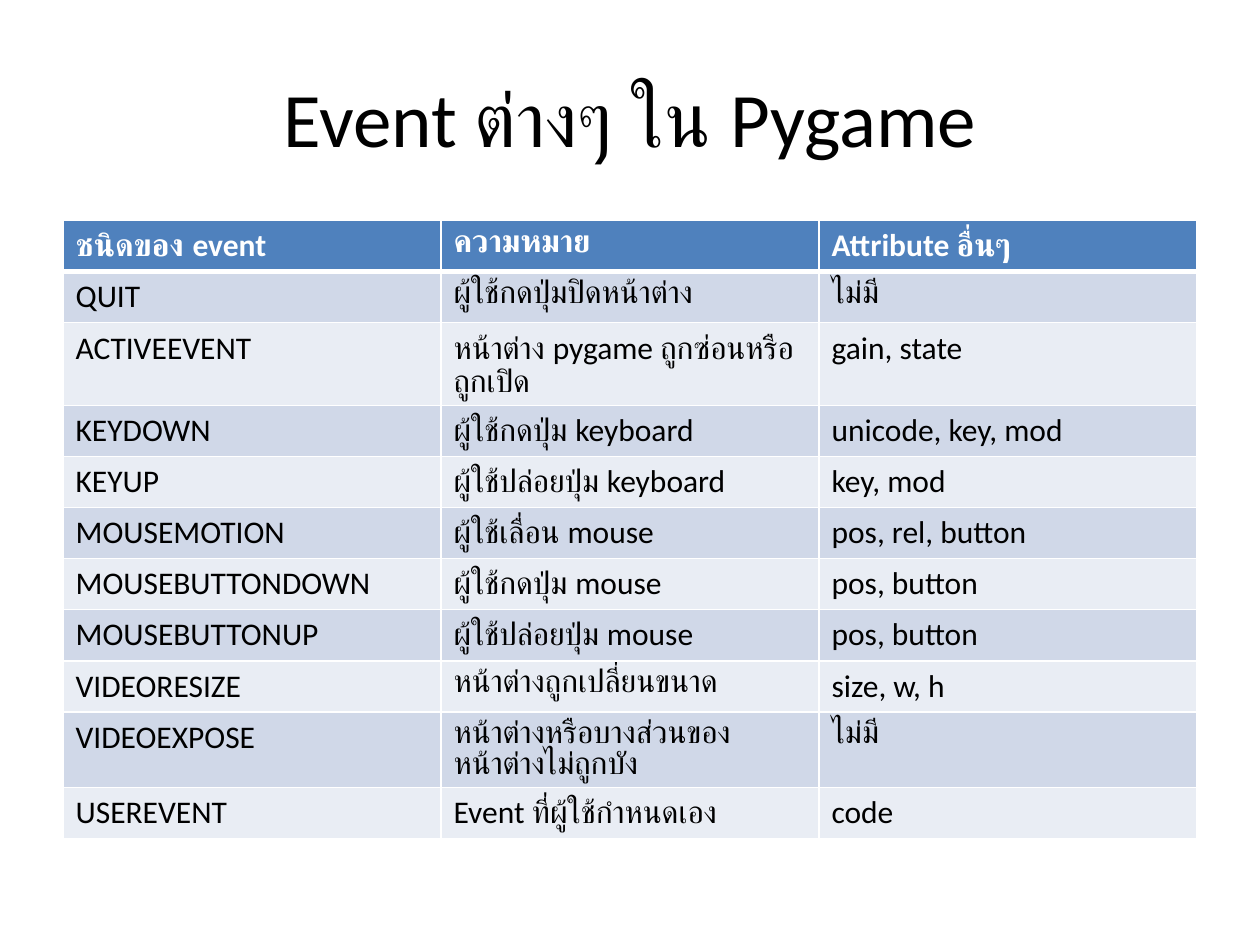
from lxml.etree import SubElement
from pptx import Presentation
from pptx.dml.color import RGBColor
from pptx.enum.lang import MSO_LANGUAGE_ID as Language
from pptx.enum.text import MSO_ANCHOR as Anchor, PP_ALIGN as Align
from pptx.oxml.ns import qn
from pptx.util import Inches, Pt

GRID_COLUMN, GRID_ROW = 0.5, 0.05
TITLE_ONLY = 5

EVENTS = [
    ("ชนิดของ event", "ความหมาย", "Attribute อื่นๆ"),
    ("QUIT", "ผู้ใช้กดปุ่มปิดหน้าต่าง", "ไม่มี"),
    ("ACTIVEEVENT", "หน้าต่าง pygame ถูกซ่อนหรือถูกเปิด", "gain, state"),
    ("KEYDOWN", "ผู้ใช้กดปุ่ม keyboard", "unicode, key, mod"),
    ("KEYUP", "ผู้ใช้ปล่อยปุ่ม keyboard", "key, mod"),
    ("MOUSEMOTION", "ผู้ใช้เลื่อน mouse", "pos, rel, button"),
    ("MOUSEBUTTONDOWN", "ผู้ใช้กดปุ่ม mouse", "pos, button"),
    ("MOUSEBUTTONUP", "ผู้ใช้ปล่อยปุ่ม mouse", "pos, button"),
    ("VIDEORESIZE", "หน้าต่างถูกเปลี่ยนขนาด", "size, w, h"),
    ("VIDEOEXPOSE", "หน้าต่างหรือบางส่วนของหน้าต่างไม่ถูกบัง", "ไม่มี"),
    ("USEREVENT", "Event ที่ผู้ใช้กำหนดเอง", "code"),
]


def color(value):
    return RGBColor.from_string(value)


def columns(count):
    return Inches(count * GRID_COLUMN)


def rows(count):
    return Inches(count * GRID_ROW)


class SlideBuilder:
    """Holds the style and the slide being built."""

    font = "Calibri"
    text, light = "000000", "FFFFFF"
    header, bands = "4F81BD", ("E9EDF4", "D0D8E8")
    title_size, table_size = 44, 18
    thin, thick = 1, 3

    def __init__(self, presentation):
        self.slide = presentation.slides.add_slide(
            presentation.slide_layouts[TITLE_ONLY])

    def add_run(self, paragraph, text, size, fill, bold=False):
        run = paragraph.add_run()
        run.text = text
        font = run.font
        font.name, font.size, font.bold = self.font, Pt(size), bold
        font.color.rgb = color(fill)
        font.language_id = Language.THAI

    def add_title(self, text, left, top, width, height):
        title = self.slide.shapes.title
        title.left, title.top = columns(left), rows(top)
        title.width, title.height = columns(width), rows(height)
        frame = title.text_frame
        frame.vertical_anchor = Anchor.MIDDLE
        paragraph = frame.paragraphs[0]
        paragraph.alignment = Align.CENTER
        self.add_run(paragraph, text, self.title_size, self.text)

    def add_borders(self, cell, top, bottom):
        properties = cell._tc.get_or_add_tcPr()
        widths = {"a:lnL": self.thin, "a:lnR": self.thin,
                  "a:lnT": top, "a:lnB": bottom}
        for tag, width in widths.items():
            line = SubElement(properties, qn(tag), w=str(Pt(width)))
            fill = SubElement(line, qn("a:solidFill"))
            SubElement(fill, qn("a:srgbClr"), val=self.light)

    def add_table(self, records, left, top, width, row_height):
        table = self.slide.shapes.add_table(
            len(records), len(records[0]), columns(left), rows(top),
            columns(width), rows(row_height * len(records))).table
        for index, record in enumerate(records):
            table.rows[index].height = rows(row_height)
            is_header = index == 0
            fill = self.header if is_header else self.bands[index % 2]
            text_color = self.light if is_header else self.text
            top_line = self.thick if index == 1 else self.thin
            bottom_line = self.thick if is_header else self.thin
            for cell, text in zip(table.rows[index].cells, record):
                self.add_borders(cell, top_line, bottom_line)
                cell.fill.solid()
                cell.fill.fore_color.rgb = color(fill)
                self.add_run(cell.text_frame.paragraphs[0], text,
                             self.table_size, text_color, is_header)


def main():
    presentation = Presentation()
    presentation.slide_width = columns(20)
    presentation.slide_height = rows(150)
    builder = SlideBuilder(presentation)
    builder.add_title("Event ต่างๆ ใน Pygame", 1, 6, 18, 25)
    builder.add_table(EVENTS, 1, 35, 18, 8.11)
    presentation.save("out.pptx")


if __name__ == "__main__":
    main()
